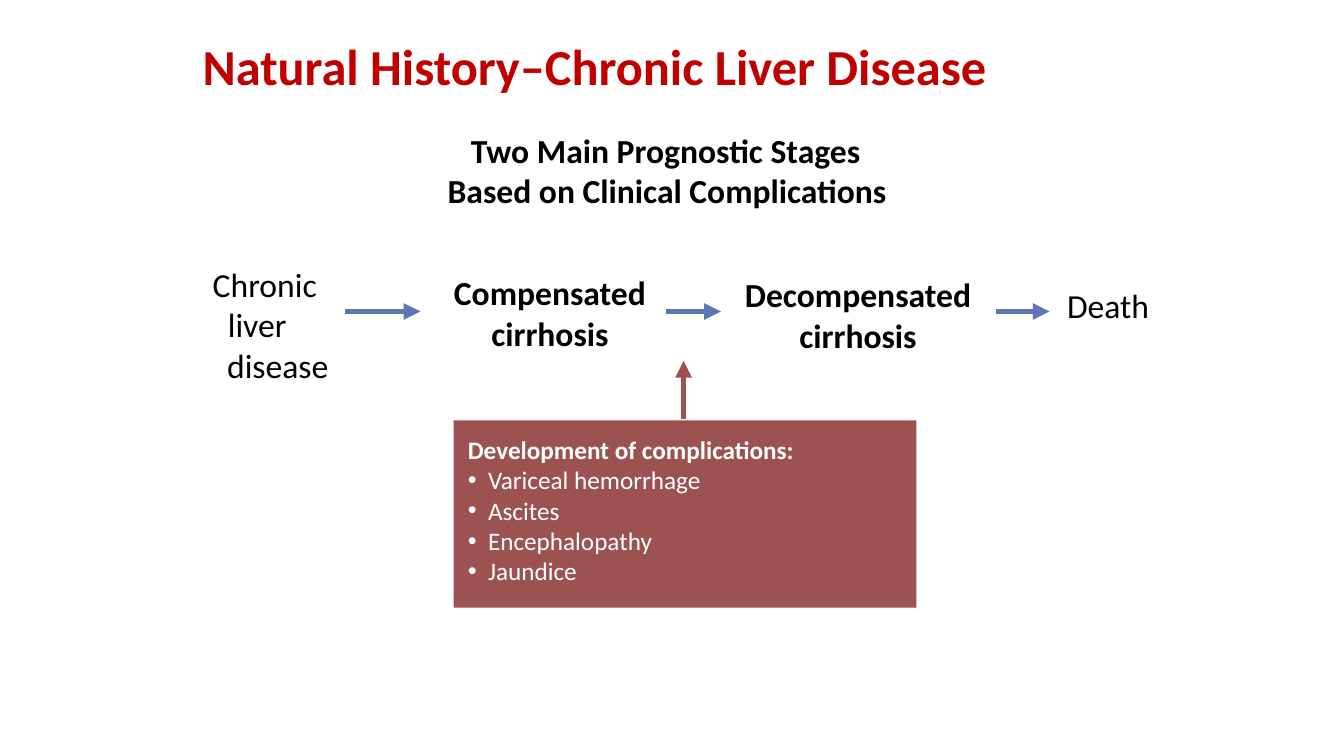
from lxml.etree import SubElement
from pptx import Presentation
from pptx.dml.color import RGBColor
from pptx.enum.shapes import MSO_CONNECTOR, MSO_SHAPE
from pptx.enum.text import MSO_ANCHOR, PP_ALIGN
from pptx.oxml.ns import qn
from pptx.util import Inches, Pt

RED = RGBColor(0xC0, 0x00, 0x00)
BLUE = RGBColor(0x60, 0x76, 0xB4)
BRICK = RGBColor(0x9C, 0x52, 0x51)
BLACK = RGBColor(0x00, 0x00, 0x00)
WHITE = RGBColor(0xFF, 0xFF, 0xFF)
LEFT, CENTER = PP_ALIGN.LEFT, PP_ALIGN.CENTER


def write(shape, lines, size, color, inset=0, wrap=True, anchor=MSO_ANCHOR.TOP):
    """Fill a shape with lines of (text, bold, alignment, indent, bullet)."""
    frame = shape.text_frame
    frame.word_wrap = wrap
    frame.vertical_anchor = anchor
    frame.margin_left = frame.margin_right = Inches(inset)
    frame.margin_top = frame.margin_bottom = Inches(inset)
    for i, (text, bold, alignment, indent, bullet) in enumerate(lines):
        paragraph = frame.add_paragraph() if i else frame.paragraphs[0]
        paragraph.alignment = alignment
        properties = paragraph._p.get_or_add_pPr()
        properties.set("marL", str(Inches(indent)))
        properties.set("indent", str(-Inches(indent) if bullet else 0))
        if bullet:
            SubElement(properties, qn("a:buFont"), typeface="Arial")
            SubElement(properties, qn("a:buChar"), char=bullet)
        run = paragraph.add_run()
        run.text = text
        run.font.name = "Calibri"
        run.font.size = Pt(size)
        run.font.bold = bold
        run.font.color.rgb = color


def add_arrow(x1, y1, x2, y2, color):
    arrow = slide.shapes.add_connector(
        MSO_CONNECTOR.STRAIGHT, Inches(x1), Inches(y1), Inches(x2), Inches(y2))
    arrow.line.color.rgb = color
    arrow.line.width = Pt(4)
    SubElement(arrow.line._get_or_add_ln(), qn("a:tailEnd"), type="triangle")
    SubElement(arrow._element.spPr, qn("a:effectLst"))


prs = Presentation()
prs.slide_width, prs.slide_height = Inches(13.33), Inches(7.5)
slide = prs.slides.add_slide(prs.slide_layouts[5])

title = slide.shapes.title
title.left, title.top = Inches(1.67), Inches(-0.44)
title.width, title.height = Inches(10), Inches(2.17)
write(title, [("Natural History–Chronic Liver Disease", True, LEFT, 0.34, None)],
      36, RED, anchor=MSO_ANCHOR.MIDDLE)

# Stages and subtitle: place, inset, wrap, lines
labels = [
    ((1.83, 2.57, 1.85, 1.31), 0.05, True, [
        ("Chronic", False, LEFT, 0.23, None),
        ("liver", False, LEFT, 0.38, None),
        ("disease", False, CENTER, 0, None)]),
    ((4.49, 2.7, 1.93, 0.81), 0, False, [
        ("Compensated", True, CENTER, 0, None),
        ("cirrhosis", True, CENTER, 0, None)]),
    ((7.34, 2.72, 2.34, 0.81), 0, False, [
        ("Decompensated", True, CENTER, 0, None),
        ("cirrhosis", True, CENTER, 0, None)]),
    ((10.48, 2.83, 1.02, 0.4), 0, True, [
        ("Death", False, CENTER, 0, None)]),
    ((4.39, 1.24, 5.47, 1.31), 0.05, True, [
        ("Two Main Prognostic Stages", True, LEFT, 0.23, None),
        ("Based on Clinical Complications", True, LEFT, 0, None)]),
]
for place, inset, wrap, lines in labels:
    label = slide.shapes.add_textbox(*map(Inches, place))
    write(label, lines, 24, BLACK, inset, wrap)

for start, end in [(3.42, 4.17), (6.61, 7.15), (9.88, 10.41)]:
    add_arrow(start, 3.09, end, 3.09, BLUE)

complications = slide.shapes.add_shape(
    MSO_SHAPE.RECTANGLE, Inches(4.5), Inches(4.17), Inches(4.59), Inches(1.86))
complications.shadow.inherit = False
complications.fill.solid()
complications.fill.fore_color.rgb = BRICK
complications.line.fill.background()
signs = ["Variceal hemorrhage", "Ascites", "Encephalopathy", "Jaundice"]
write(complications,
      [("Development of complications:", True, LEFT, 0, None)]
      + [(sign, False, LEFT, 0.2, "•") for sign in signs],
      18, WHITE, inset=0.14)
add_arrow(6.78, 4.16, 6.78, 3.58, BRICK)

prs.save("out.pptx")
